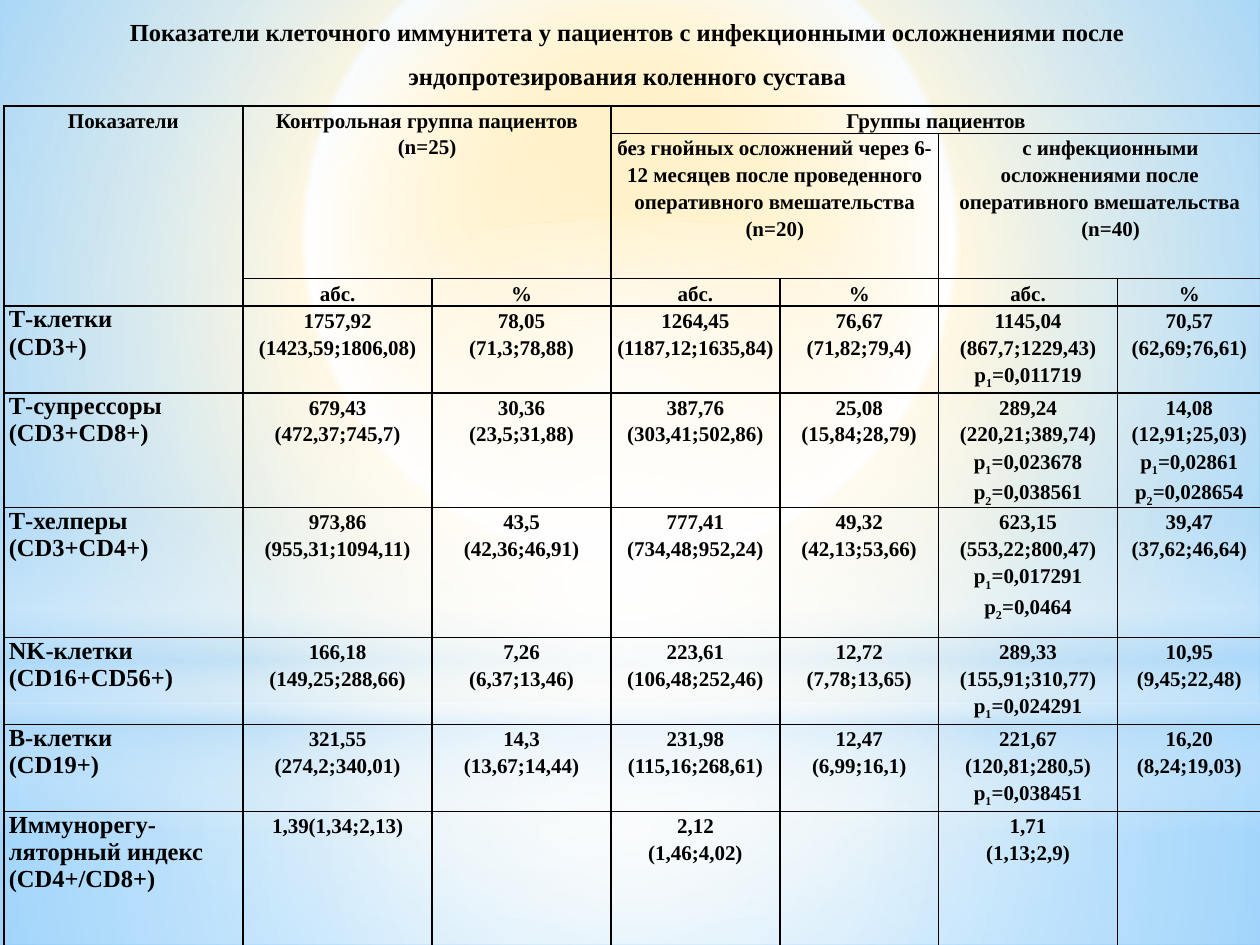
"""Slide with a table of cellular immunity values after knee replacement."""
from pptx import Presentation
from pptx import util as u
from pptx.dml.color import RGBColor
from pptx.enum import shapes, text
from pptx.oxml import parse_xml
from pptx.oxml.ns import nsdecls, qn

BLACK = RGBColor(0x00, 0x00, 0x00)
WHITE = RGBColor(0xFF, 0xFF, 0xFF)
AMBER = RGBColor(0xFF, 0xC0, 0x00)
YELLOW = RGBColor(0xFF, 0xD2, 0x48)
CREAM = RGBColor(0xFF, 0xEC, 0xB2)
SKY = RGBColor(0x5B, 0xB9, 0xFF)
PALE_BLUE = RGBColor(0xB4, 0xDC, 0xFA)
FONT = "Times New Roman"

TITLE = ("Показатели клеточного иммунитета у пациентов с инфекционными "
         "осложнениями после эндопротезирования коленного сустава")
CENTRE = (50, 50, 50, 50)
SUN = [(0, AMBER, 100), (17, YELLOW, 100), (41, WHITE, 100), (42, CREAM, 100), (100, SKY, 100)]
RECT, OVAL = shapes.MSO_SHAPE.RECTANGLE, shapes.MSO_SHAPE.OVAL
HAZE = [
    (RECT, (0, 5.58, 10, 1.92), [(0, WHITE, 91), (37, WHITE, 76), (100, PALE_BLUE, 79)], CENTRE),
    (RECT, (0, 0, 10, 5.58), [(0, WHITE, 89), (48, WHITE, 62), (100, PALE_BLUE, 79)], CENTRE),
    (RECT, (0, 4.12, 10, 2.5),
     [(0, WHITE, 0), (29, WHITE, 30), (45, PALE_BLUE, 40), (55, WHITE, 26),
      (65, PALE_BLUE, 60), (100, WHITE, 0)], None),
    (OVAL, (0, 1.75, 10, 5.58), [(0, WHITE, 100), (56, WHITE, 0)], CENTRE),
]

COLUMNS = [1.9, 1.5, 1.42, 1.34, 1.26, 1.42, 1.14]
ROWS = [0.22, 1.15, 0.22, 0.69, 0.91, 1.03, 0.69, 0.69, 1.08]
HEADINGS = [
    (0, 0, 3, 1, "Показатели"),
    (0, 1, 2, 2, "Контрольная группа пациентов (n=25)"),
    (0, 3, 1, 4, "Группы пациентов"),
    (1, 3, 1, 2, "без гнойных осложнений через 6-12 месяцев после проведенного "
                 "оперативного вмешательства\n(n=20)"),
    (1, 5, 1, 2, "с инфекционными осложнениями после оперативного вмешательства\n(n=40)"),
]
UNITS = ["абс.", "%"] * 3
INDICATORS = [
    ["Т-клетки\n(СD3+)", "1757,92\n(1423,59;1806,08)", "78,05\n(71,3;78,88)",
     "1264,45\n(1187,12;1635,84)", "76,67\n(71,82;79,4)",
     "1145,04\n(867,7;1229,43)\nр1=0,011719", "70,57\n(62,69;76,61)"],
    ["Т-супрессоры\n(СD3+СD8+)", "679,43\n(472,37;745,7)", "30,36\n(23,5;31,88)",
     "387,76\n(303,41;502,86)", "25,08\n(15,84;28,79)",
     "289,24\n(220,21;389,74)\nр1=0,023678\nр2=0,038561",
     "14,08\n(12,91;25,03)\nр1=0,02861\nр2=0,028654"],
    ["Т-хелперы\n(СD3+СD4+)", "973,86\n(955,31;1094,11)", "43,5\n(42,36;46,91)",
     "777,41\n(734,48;952,24)", "49,32\n(42,13;53,66)",
     "623,15\n(553,22;800,47)\nр1=0,017291\nр2=0,0464", "39,47\n(37,62;46,64)"],
    ["NK-клетки\n(СD16+СD56+)", "166,18\n(149,25;288,66)", "7,26\n(6,37;13,46)",
     "223,61\n(106,48;252,46)", "12,72\n(7,78;13,65)",
     "289,33\n(155,91;310,77)\nр1=0,024291", "10,95\n(9,45;22,48)"],
    ["В-клетки\n(СD19+)", "321,55\n(274,2;340,01)", "14,3\n(13,67;14,44)",
     "231,98\n(115,16;268,61)", "12,47\n(6,99;16,1)",
     "221,67\n(120,81;280,5)\nр1=0,038451", "16,20\n(8,24;19,03)"],
    ["Иммунорегу-ляторный индекс\n(СD4+/СD8+)", "1,39(1,34;2,13)", "",
     "2,12\n(1,46;4,02)", "", "1,71\n(1,13;2,9)", ""],
]


def set_gradient(fill, stops, focus):
    fill.gradient()
    stop_xml = "".join(
        f'<a:gs pos="{pos * 1000}"><a:srgbClr val="{color}">'
        f'<a:alpha val="{alpha * 1000}"/></a:srgbClr></a:gs>' for pos, color, alpha in stops)
    if focus:
        sides = " ".join(f'{side}="{part * 1000}"' for side, part in zip("ltrb", focus))
        direction = f'<a:path path="circle"><a:fillToRect {sides}/></a:path>'
    else:
        direction = '<a:lin ang="5400000" scaled="0"/>'
    gradient = parse_xml(f'<a:gradFill {nsdecls("a")} rotWithShape="1">'
                         f'<a:gsLst>{stop_xml}</a:gsLst>{direction}</a:gradFill>')
    owner = fill._xPr
    owner.replace(owner.find(qn("a:gradFill")), gradient)


def add_run(paragraph, words, size):
    run = paragraph.add_run()
    run.text = words
    run.font.name, run.font.size, run.font.bold = FONT, u.Pt(size), True
    run.font.color.rgb = BLACK
    return run


def write_cell(cell, words, size=12, centred=True, indent=0):
    for number, line in enumerate(words.split("\n") if words else []):
        frame = cell.text_frame
        paragraph = frame.add_paragraph() if number else frame.paragraphs[0]
        if centred:
            paragraph.alignment, paragraph.line_spacing = text.PP_ALIGN.CENTER, 1.15
        if indent:
            paragraph._p.get_or_add_pPr().set("indent", str(u.Inches(indent)))
        if line[:2] in ("р1", "р2"):
            add_run(paragraph, line[0], size)
            add_run(paragraph, line[1], size).font._element.set("baseline", "-25000")
            line = line[2:]
        add_run(paragraph, line, size)


def style_cell(cell):
    cell.margin_left = cell.margin_right = u.Inches(0.04)
    cell.margin_top = cell.margin_bottom = 0
    for side in "LRTB":
        cell._tc.get_or_add_tcPr().append(parse_xml(
            f'<a:ln{side} {nsdecls("a")} w="{u.Pt(1)}"><a:solidFill>'
            f'<a:srgbClr val="{BLACK}"/></a:solidFill></a:ln{side}>'))
    cell.fill.background()


def add_indicator_table(slide):
    frame = slide.shapes.add_table(len(ROWS), len(COLUMNS), u.Inches(0.03), u.Inches(0.84),
                                   u.Inches(sum(COLUMNS)), u.Inches(sum(ROWS)))
    table = frame.table
    table.first_row = table.horz_banding = False
    for column, width in zip(table.columns, COLUMNS):
        column.width = u.Inches(width)
    for row, height in zip(table.rows, ROWS):
        row.height = u.Inches(height)
    for cell in table.iter_cells():
        style_cell(cell)
    for row, col, down, across, heading in HEADINGS:
        cell = table.cell(row, col)
        cell.merge(table.cell(row + down - 1, col + across - 1))
        write_cell(cell, heading, indent=0.17 if (row, col) == (1, 5) else 0)
    for col, unit in enumerate(UNITS, 1):
        write_cell(table.cell(2, col), unit)
        table.cell(2, col).vertical_anchor = text.MSO_ANCHOR.MIDDLE
    for row, (indicator, *values) in enumerate(INDICATORS, 3):
        write_cell(table.cell(row, 0), indicator, size=14, centred=False)
        for col, value in enumerate(values, 1):
            write_cell(table.cell(row, col), value)


def add_title(slide):
    title = slide.shapes.title
    title.left, title.top, title.width, title.height = map(u.Inches, (0.12, -0.03, 9.72, 0.77))
    frame = title.text_frame
    frame.word_wrap = True
    frame.auto_size = text.MSO_AUTO_SIZE.SHAPE_TO_FIT_TEXT
    frame.vertical_anchor = text.MSO_ANCHOR.TOP
    paragraph = frame.paragraphs[0]
    paragraph.alignment, paragraph.line_spacing = text.PP_ALIGN.CENTER, 1.5
    add_run(paragraph, TITLE, 14)
    slide.shapes._spTree.append(title._element)


def main():
    deck = Presentation()
    deck.slide_width, deck.slide_height = u.Inches(10), u.Inches(7.5)
    slide = deck.slides.add_slide(deck.slide_layouts[5])
    set_gradient(slide.background.fill, SUN, (20, 10, 20, 60))
    for outline, place, stops, focus in HAZE:
        haze = slide.shapes.add_shape(outline, *map(u.Inches, place))
        haze.shadow.inherit = False
        haze.line.fill.background()
        set_gradient(haze.fill, stops, focus)
    add_indicator_table(slide)
    add_title(slide)
    deck.save("out.pptx")


if __name__ == "__main__":
    main()
